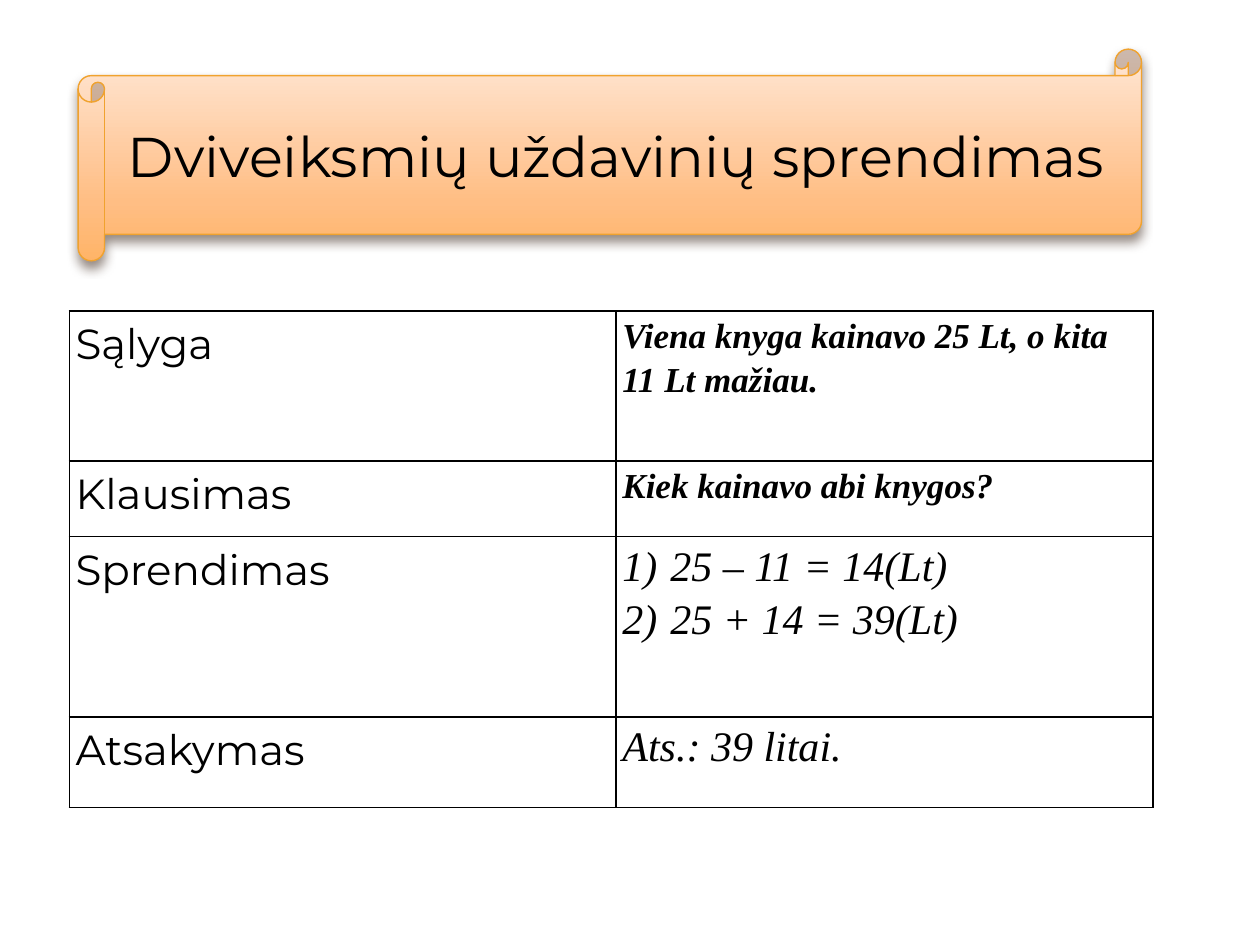
import dataclasses

import pptx
import pptx.dml.color
import pptx.enum.shapes
import pptx.enum.text
import pptx.oxml
import pptx.oxml.ns
import pptx.util

BLACK = pptx.dml.color.RGBColor(0x00, 0x00, 0x00)
ORANGE = pptx.dml.color.RGBColor(0xF0, 0xA2, 0x2E)
SHADOW = pptx.dml.color.RGBColor(0x4E, 0x3B, 0x30)
SCROLL_STOPS = (
    (0, pptx.dml.color.RGBColor(0xFF, 0xE7, 0xD7)),
    (72, pptx.dml.color.RGBColor(0xFF, 0xBE, 0x84)),
    (100, pptx.dml.color.RGBColor(0xFF, 0xB4, 0x68)),
)

# The slide is a grid of 100 columns by 75 rows of square units.
UNIT = pptx.util.Inches(0.1)
COLS, ROWS = 100, 75
COL_WIDTHS = (43.4, 42.6)

LABEL = {"name": "Montserrat", "size": pptx.util.Pt(24), "bold": False, "italic": False}
TASK = {"name": "Times New Roman", "size": pptx.util.Pt(20), "bold": True, "italic": True}
WORKING = {"name": "Times New Roman", "size": pptx.util.Pt(24), "bold": False, "italic": True}
TITLE = {"name": "Montserrat", "size": pptx.util.Pt(32), "bold": False}


@dataclasses.dataclass(frozen=True)
class Step:
    label: str
    lines: tuple[str, ...]
    height: float
    font: dict
    numbered: bool = False


STEPS = (
    Step("Sąlyga", ("Viena knyga kainavo 25 Lt, o kita 11 Lt mažiau.",), 11.9, TASK),
    Step("Klausimas", ("Kiek kainavo abi knygos?",), 6, TASK),
    Step("Sprendimas", ("25 – 11 = 14(Lt)", "25 + 14 = 39(Lt)"), 14.3, WORKING, True),
    Step("Atsakymas", ("Ats.: 39 litai.",), 7.2, WORKING),
)


def grid(*units: float) -> list[int]:
    return [round(u * UNIT) for u in units]


def xml(text: str):
    """Parse one drawing element given without its namespace declaration."""
    tag, rest = text[:text.index(" ")], text[text.index(" "):]
    return pptx.oxml.parse_xml(f"{tag} {pptx.oxml.ns.nsdecls('a')}{rest}")


def add_run(p, text: str, font: dict) -> None:
    r = p.add_run()
    r.text = text
    for name, value in font.items():
        setattr(r.font, name, value)
    r.font.color.rgb = BLACK


def number_paragraph(p) -> None:
    indent = pptx.util.Inches(0.38)
    pPr = p._p.get_or_add_pPr()
    pPr.set("marL", str(indent))
    pPr.set("indent", str(-indent))
    pPr.append(xml('<a:buFont typeface="+mj-lt"/>'))
    pPr.append(xml('<a:buAutoNum type="arabicParenR"/>'))


def fill_cell(cell, lines: tuple[str, ...], font: dict, numbered: bool) -> None:
    margin = pptx.util.Inches(0.05)
    for name, value in {"left": margin, "right": margin, "top": 0, "bottom": 0}.items():
        setattr(cell, f"margin_{name}", value)
    tcPr = cell._tc.get_or_add_tcPr()
    for side in "LRTB":
        tcPr.append(xml(f'<a:ln{side} w="{pptx.util.Pt(1)}"><a:solidFill>'
                        f'<a:srgbClr val="{BLACK}"/></a:solidFill></a:ln{side}>'))
    cell.fill.background()
    tf = cell.text_frame
    for i, line in enumerate(lines):
        p = tf.add_paragraph() if i else tf.paragraphs[0]
        p.line_spacing = 1.15
        if numbered:
            number_paragraph(p)
        add_run(p, line, font)


def add_steps_table(s, steps: tuple[Step, ...]) -> None:
    box = grid(5.5, 24.7, sum(COL_WIDTHS), sum(step.height for step in steps))
    table = s.shapes.add_table(len(steps), len(COL_WIDTHS), *box).table
    table.first_row = table.horz_banding = False
    for column, width in zip(table.columns, grid(*COL_WIDTHS)):
        column.width = width
    for i, step in enumerate(steps):
        table.rows[i].height = grid(step.height)[0]
        fill_cell(table.cell(i, 0), (step.label,), LABEL, False)
        fill_cell(table.cell(i, 1), step.lines, step.font, step.numbered)


def add_title_scroll(s, text: str) -> None:
    sp = s.shapes.add_shape(pptx.enum.shapes.MSO_SHAPE.HORIZONTAL_SCROLL,
                            *grid(6.2, 3.9, 84.4, 16.8))
    sp.line.color.rgb = ORANGE
    sp.line.width = pptx.util.Pt(0.79)
    stops = "".join(f'<a:gs pos="{pos * 1000}"><a:srgbClr val="{color}"/></a:gs>'
                    for pos, color in SCROLL_STOPS)
    spPr = sp._element.spPr
    spPr.find(pptx.oxml.ns.qn("a:ln")).addprevious(
        xml(f'<a:gradFill rotWithShape="1"><a:gsLst>{stops}</a:gsLst>'
            '<a:lin ang="5400000" scaled="0"/></a:gradFill>'))
    sp.shadow.inherit = False
    spPr.find(pptx.oxml.ns.qn("a:effectLst")).append(
        xml(f'<a:outerShdw blurRad="{pptx.util.Pt(6)}" dist="{pptx.util.Pt(4)}" '
            f'dir="5400000" rotWithShape="0"><a:srgbClr val="{SHADOW}">'
            '<a:alpha val="60000"/></a:srgbClr></a:outerShdw>'))
    tf = sp.text_frame
    tf.word_wrap = True
    tf.vertical_anchor = pptx.enum.text.MSO_ANCHOR.MIDDLE
    p = tf.paragraphs[0]
    p.alignment = pptx.enum.text.PP_ALIGN.CENTER
    add_run(p, text, TITLE)


def main() -> None:
    prs = pptx.Presentation()
    prs.slide_width, prs.slide_height = grid(COLS, ROWS)
    s = prs.slides.add_slide(prs.slide_layouts[6])
    add_steps_table(s, STEPS)
    add_title_scroll(s, "Dviveiksmių uždavinių sprendimas")
    prs.save("out.pptx")


if __name__ == "__main__":
    main()
